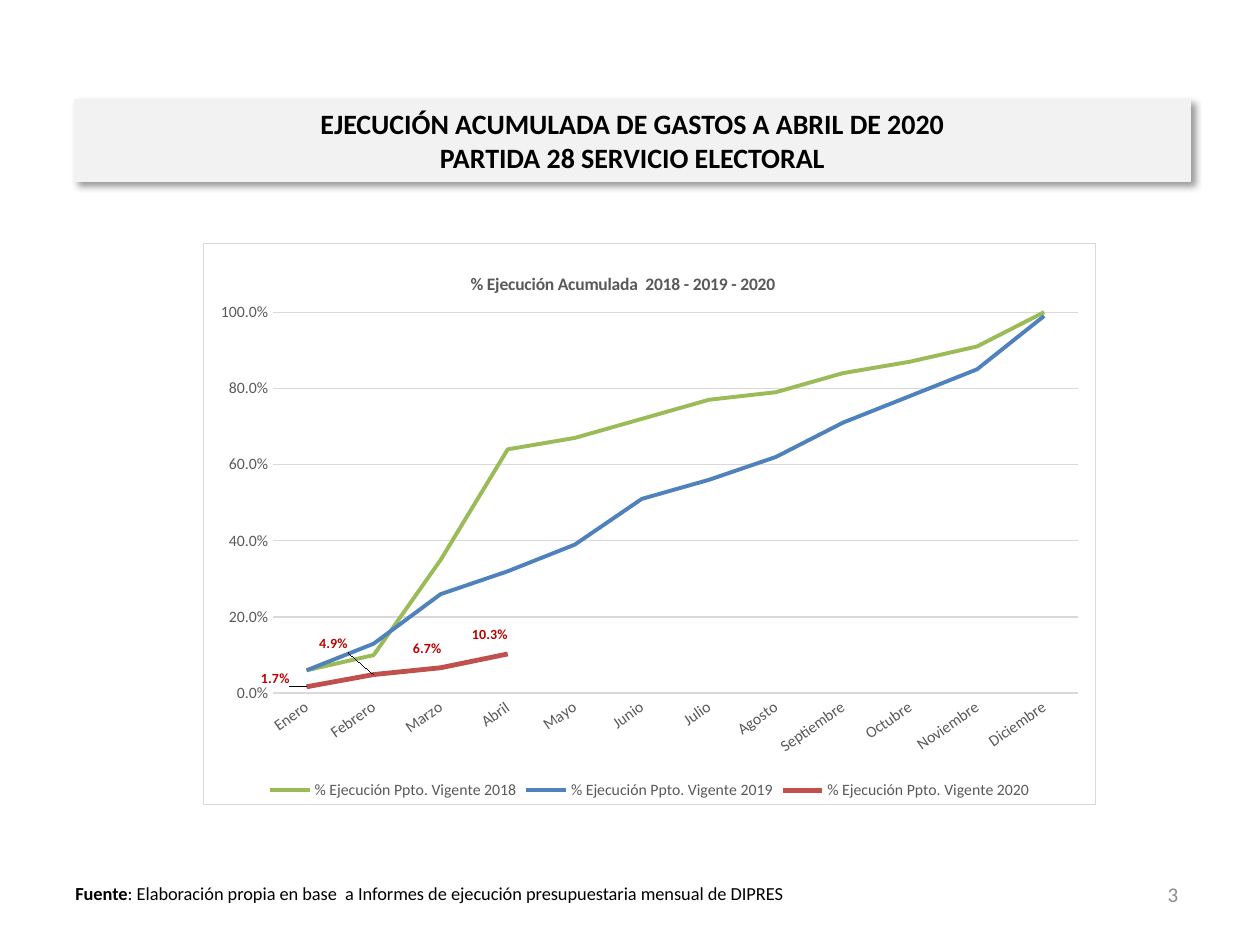
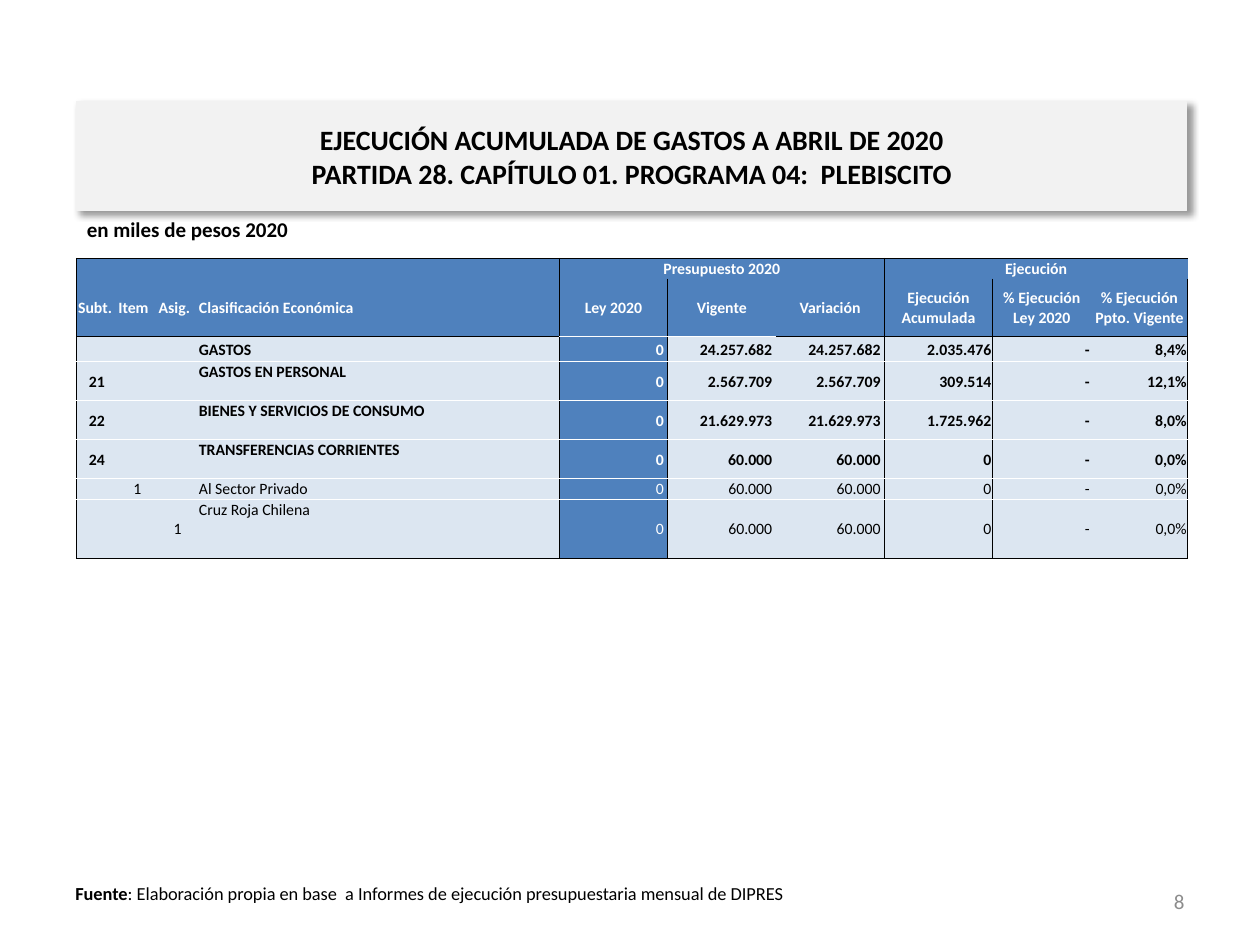
from lxml import etree
from pptx import Presentation
from pptx.chart.data import CategoryChartData
from pptx.dml.color import RGBColor
from pptx.enum.chart import XL_CHART_TYPE, XL_LABEL_POSITION, XL_LEGEND_POSITION, XL_MARKER_STYLE, XL_TICK_MARK
from pptx.enum.shapes import MSO_SHAPE
from pptx.enum.text import MSO_ANCHOR, PP_ALIGN
from pptx.oxml import parse_xml
from pptx.oxml.ns import nsdecls, qn
from pptx.util import Inches, Pt

LEFT, CENTER, RIGHT = PP_ALIGN.LEFT, PP_ALIGN.CENTER, PP_ALIGN.RIGHT
TOP, MIDDLE, BOTTOM = MSO_ANCHOR.TOP, MSO_ANCHOR.MIDDLE, MSO_ANCHOR.BOTTOM
NO_TICK = XL_TICK_MARK.NONE

FONT = "Calibri"
BLACK, WHITE, BAND, PAGE_GRAY = "000000", "FFFFFF", "F2F2F2", "8C8C8C"
GRAY, GRID = "595959", "D9D9D9"
BLUE, PALE, GREEN, RED, LABEL_RED = "4F81BD", "DCE6F1", "9BBB59", "C0504D", "C00000"
PLAIN_TABLE = "{2D5ABB26-0587-4C30-8999-92F81FD0307C}"

HEADING = "EJECUCIÓN ACUMULADA DE GASTOS A ABRIL DE 2020"
SOURCE = [("Fuente", True),
          (": Elaboración propia en base  a Informes de ejecución presupuestaria mensual de DIPRES", False)]
UNIT = "en miles de pesos 2020"

CHART_TITLE = "% Ejecución Acumulada  2018 - 2019 - 2020"
CHART_AREA = (1.61, 1.93, 7.09, 4.46)
MONTHS = ["Enero", "Febrero", "Marzo", "Abril", "Mayo", "Junio", "Julio", "Agosto",
          "Septiembre", "Octubre", "Noviembre", "Diciembre"]
SERIES = [
    ("% Ejecución Ppto. Vigente 2018", GREEN, 2.25,
     [0.06, 0.1, 0.35, 0.64, 0.67, 0.72, 0.77, 0.79, 0.84, 0.87, 0.91, 1]),
    ("% Ejecución Ppto. Vigente 2019", BLUE, 2.25,
     [0.06, 0.13, 0.26, 0.32, 0.39, 0.51, 0.56, 0.62, 0.71, 0.78, 0.85, 0.99]),
    ("% Ejecución Ppto. Vigente 2020", RED, 2.75, [0.017, 0.049, 0.067, 0.103]),
]
# Shifts of the 2020 labels, as shares of the chart's width and height
LABEL_SHIFTS = [(-0.035, 0.01), (-0.045, -0.03), (-0.015, -0.01), (-0.02, -0.01)]

GROUPS = {4: "Presupuesto 2020", 7: "Ejecución"}
COLUMNS = [("Subt.", 0.32), ("Item", 0.32), ("Asig.", 0.32), ("Clasificación Económica", 2.87),
           ("Ley 2020", 0.86), ("Vigente", 0.86), ("Variación", 0.86),
           ("Ejecución Acumulada", 0.86), ("% Ejecución Ley 2020", 0.78),
           ("% Ejecución Ppto. Vigente", 0.77)]
HEADER_HEIGHTS = [0.15, 0.46]
EXPENSES = [  # row height, bold, cells
    (0.2, True, ["", "", "", "GASTOS", "0", "24.257.682", "24.257.682", "2.035.476", "-", "8,4%"]),
    (0.31, True, ["21", "", "", "GASTOS EN PERSONAL", "0", "2.567.709", "2.567.709",
                  "309.514", "-", "12,1%"]),
    (0.31, True, ["22", "", "", "BIENES Y SERVICIOS DE CONSUMO", "0", "21.629.973", "21.629.973",
                  "1.725.962", "-", "8,0%"]),
    (0.31, True, ["24", "", "", "TRANSFERENCIAS CORRIENTES", "0", "60.000", "60.000",
                  "0", "-", "0,0%"]),
    (0.16, False, ["", "1", "", "Al Sector Privado", "0", "60.000", "60.000", "0", "-", "0,0%"]),
    (0.47, False, ["", "", "1", "Cruz Roja Chilena", "0", "60.000", "60.000", "0", "-", "0,0%"]),
]
NAME, LAW = 3, 4
BLOCK_STARTS = (0, 4, 7)
BLOCK_ENDS = (3, 6, 9)


def color(value):
    return RGBColor.from_string(value)


def style(font, size, tint, bold=False):
    for key, value in {"name": FONT, "size": Pt(size), "bold": bold}.items():
        setattr(font, key, value)
    font.color.rgb = color(tint)


def paint(shape_format, fill, line, width=0.75):
    shape_format.fill.solid()
    shape_format.fill.fore_color.rgb = color(fill)
    shape_format.line.color.rgb = color(line)
    shape_format.line.width = Pt(width)


def write(para, spans, size, tint, align=LEFT):
    para.alignment = align
    for text, bold in spans:
        span = para.add_run()
        span.text = text
        style(span.font, size, tint, bold)


def add_text(page, area, spans, size, tint=BLACK, align=LEFT, anchor=TOP):
    box = page.shapes.add_textbox(*map(Inches, area))
    box.text_frame.word_wrap = True
    box.text_frame.vertical_anchor = anchor
    write(box.text_frame.paragraphs[0], spans, size, tint, align)


def add_band(page, area, subject):
    band = page.shapes.add_shape(MSO_SHAPE.RECTANGLE, *map(Inches, area))
    paint(band, BAND, BAND)
    band.shadow.inherit = False
    effects = band._element.spPr.find(qn("a:effectLst"))
    effects.append(parse_xml(
        f'<a:outerShdw {nsdecls("a")} blurRad="{Pt(4)}" dist="{Pt(3)}" dir="2700000" algn="tl" '
        f'rotWithShape="0"><a:srgbClr val="{BLACK}"><a:alpha val="40000"/></a:srgbClr></a:outerShdw>'))
    frame = band.text_frame
    frame.word_wrap = True
    frame.vertical_anchor = MIDDLE
    para = frame.paragraphs[0]
    write(para, [(HEADING, True)], 16, BLACK, CENTER)
    para.add_line_break()
    write(para, [(subject, True)], 16, BLACK, CENTER)


def add_page(deck, band_area, subject, number, number_at):
    page = deck.slides.add_slide(deck.slide_layouts[6])
    add_text(page, (0.5, 6.95, 6.5, 0.28), SOURCE, 10.5)
    add_band(page, band_area, subject)
    add_text(page, (*number_at, 2.33, 0.4), [(number, False)], 12, PAGE_GRAY, RIGHT, MIDDLE)
    return page


def manual_layout(inner=False, **places):
    """Chart layout whose places are shares of the chart's size."""
    layout = parse_xml(f'<c:layout {nsdecls("c")}><c:manualLayout/></c:layout>')
    settings = {"layoutTarget": "inner"} if inner else {}
    if inner or "y" in places and places["y"] > 0.04:
        settings.update(xMode="edge", yMode="edge")
    for tag, value in {**settings, **places}.items():
        etree.SubElement(layout[0], qn(f"c:{tag}")).set("val", str(value))
    return layout


def label_points(series):
    labels = series.data_labels
    labels.show_value = True
    labels.number_format = "0.0%"
    labels.number_format_is_linked = False
    labels.position = XL_LABEL_POSITION.ABOVE
    style(labels.font, 8, LABEL_RED, True)
    for index, (dx, dy) in enumerate(LABEL_SHIFTS):
        label = series.points[index].data_label
        style(label.font, 8, LABEL_RED, True)
        label.position = XL_LABEL_POSITION.ABOVE
    for entry, (dx, dy) in zip(labels._element.findall(qn("c:dLbl")), LABEL_SHIFTS):
        entry.find(qn("c:idx")).addnext(manual_layout(x=dx, y=dy))


def style_axes(chart):
    months, shares = chart.category_axis, chart.value_axis
    for axis in (months, shares):
        axis.major_tick_mark = axis.minor_tick_mark = NO_TICK
        style(axis.tick_labels.font, 9, GRAY)
    months.format.line.color.rgb = color(GRID)
    months.format.line.width = Pt(1)
    months._element.find(qn("c:txPr")).find(qn("a:bodyPr")).set("rot", "-2100000")
    for key, value in {"minimum_scale": 0, "maximum_scale": 1, "major_unit": 0.2}.items():
        setattr(shares, key, value)
    shares.tick_labels.number_format = "0.0%"
    shares.tick_labels.number_format_is_linked = False
    shares.format.line.fill.background()
    shares.major_gridlines.format.line.color.rgb = color(GRID)
    shares.major_gridlines.format.line.width = Pt(0.75)


def add_execution_chart(page):
    data = CategoryChartData(number_format="0.0%")
    data.categories = MONTHS
    for name, _, _, values in SERIES:
        data.add_series(name, values + [None] * (len(MONTHS) - len(values)))
    chart = page.shapes.add_chart(XL_CHART_TYPE.LINE, *map(Inches, CHART_AREA), data).chart
    style(chart.font, 10, BLACK)

    chart.has_title = True
    write(chart.chart_title.text_frame.paragraphs[0], [(CHART_TITLE, True)], 10, GRAY, CENTER)
    chart.chart_title.include_in_layout = False
    title = chart.chart_title._element
    for old in title.findall(qn("c:layout")):
        title.remove(old)
    title.find(qn("c:tx")).addnext(manual_layout(x=0.296, y=0.045))

    chart.has_legend = True
    chart.legend.position = XL_LEGEND_POSITION.BOTTOM
    chart.legend.include_in_layout = False
    style(chart.legend.font, 9, GRAY)
    style_axes(chart)

    plot = chart.plots[0]
    plot.vary_by_categories = False
    for series, (_, tint, width, _) in zip(plot.series, SERIES):
        series.smooth = False
        series.marker.style = XL_MARKER_STYLE.NONE
        series.format.line.color.rgb = color(tint)
        series.format.line.width = Pt(width)
    label_points(plot.series[-1])

    space = chart._chartSpace
    area = space.chart.plotArea
    for old in area.findall(qn("c:layout")):
        area.remove(old)
    area.insert(0, manual_layout(inner=True, x=0.078, y=0.122, w=0.902, h=0.68))
    space.chart.addnext(parse_xml(
        f'<c:spPr {nsdecls("c", "a")}><a:solidFill><a:srgbClr val="{WHITE}"/></a:solidFill>'
        f'<a:ln w="{Pt(0.75)}"><a:solidFill><a:srgbClr val="{GRID}"/></a:solidFill></a:ln></c:spPr>'))


def set_borders(cell, sides):
    properties = cell._tc.get_or_add_tcPr()
    lines = [parse_xml(f'<a:ln{side} {nsdecls("a")} w="{Pt(0.5)}"><a:solidFill>'
                       f'<a:srgbClr val="{sides[side]}"/></a:solidFill></a:ln{side}>')
             for side in "LRTB" if side in sides]
    for position, line in enumerate(lines):
        properties.insert(position, line)


def fill_cell(cell, text, fill, tint, bold, align, anchor, right=0.01):
    cell.fill.solid()
    cell.fill.fore_color.rgb = color(fill)
    margins = {"left": 0.01, "right": right, "top": 0.01, "bottom": 0}
    for side, value in margins.items():
        setattr(cell, f"margin_{side}", Inches(value))
    cell.vertical_anchor = anchor
    para = cell.text_frame.paragraphs[0]
    if text:
        write(para, [(text, bold)], 9, tint, align)
    else:
        etree.SubElement(para._p, qn("a:endParaRPr")).set("sz", "900")


def cell_borders(row, column, last):
    sides = {}
    if column in BLOCK_STARTS:
        sides["L"] = BLACK
    if column in BLOCK_ENDS:
        sides["R"] = BLACK
    under_header = WHITE if column in (4, 5) else BLACK
    if row != 1:
        sides["T"] = {0: BLACK, 2: under_header}.get(row, WHITE)
    if row != 0:
        sides["B"] = {1: under_header, last: BLACK}.get(row, WHITE)
    return sides


def add_expense_table(page):
    heights = HEADER_HEIGHTS + [height for height, _, _ in EXPENSES]
    widths = [width for _, width in COLUMNS]
    frame = page.shapes.add_table(len(heights), len(widths), Inches(0.61), Inches(2.05),
                                  Inches(sum(widths)), Inches(sum(heights)))
    table = frame.table
    table.first_row = table.horz_banding = False
    table._tbl.tblPr.find(qn("a:tableStyleId")).text = PLAIN_TABLE
    for column, width in zip(table.columns, widths):
        column.width = Inches(width)
    for row, height in zip(table.rows, heights):
        row.height = Inches(height)

    for index, (title, _) in enumerate(COLUMNS):
        fill_cell(table.cell(0, index), GROUPS.get(index, ""), BLUE, WHITE, True, CENTER, BOTTOM)
        fill_cell(table.cell(1, index), title, BLUE, WHITE, True,
                  LEFT if index <= NAME else CENTER, MIDDLE)
    for row, (_, bold, texts) in enumerate(EXPENSES, 2):
        for index, text in enumerate(texts):
            fill, tint = (BLUE, WHITE) if index == LAW else (PALE, BLACK)
            align = CENTER if index < NAME else LEFT if index == NAME else RIGHT
            anchor = TOP if index == NAME and row > 2 else MIDDLE
            fill_cell(table.cell(row, index), text, fill, tint, bold, align, anchor,
                      0.03 if LAW <= index < 7 else 0.01)
    for row in range(len(heights)):
        for index in range(len(widths)):
            set_borders(table.cell(row, index), cell_borders(row, index, len(heights) - 1))
    for start in GROUPS:
        table.cell(0, start).merge(table.cell(0, start + 2))


def main():
    deck = Presentation()
    deck.slide_width, deck.slide_height = Inches(10), Inches(7.5)
    page = add_page(deck, (0.59, 0.79, 8.86, 0.65), "PARTIDA 28 SERVICIO ELECTORAL", "3", (7.12, 6.9))
    add_execution_chart(page)
    page = add_page(deck, (0.61, 0.81, 8.81, 0.86),
                    "PARTIDA 28. CAPÍTULO 01. PROGRAMA 04:  PLEBISCITO", "8", (7.17, 6.95))
    add_text(page, (0.59, 1.67, 8.81, 0.41), [(UNIT, True)], 12)
    add_expense_table(page)
    deck.save("out.pptx")


if __name__ == "__main__":
    main()
